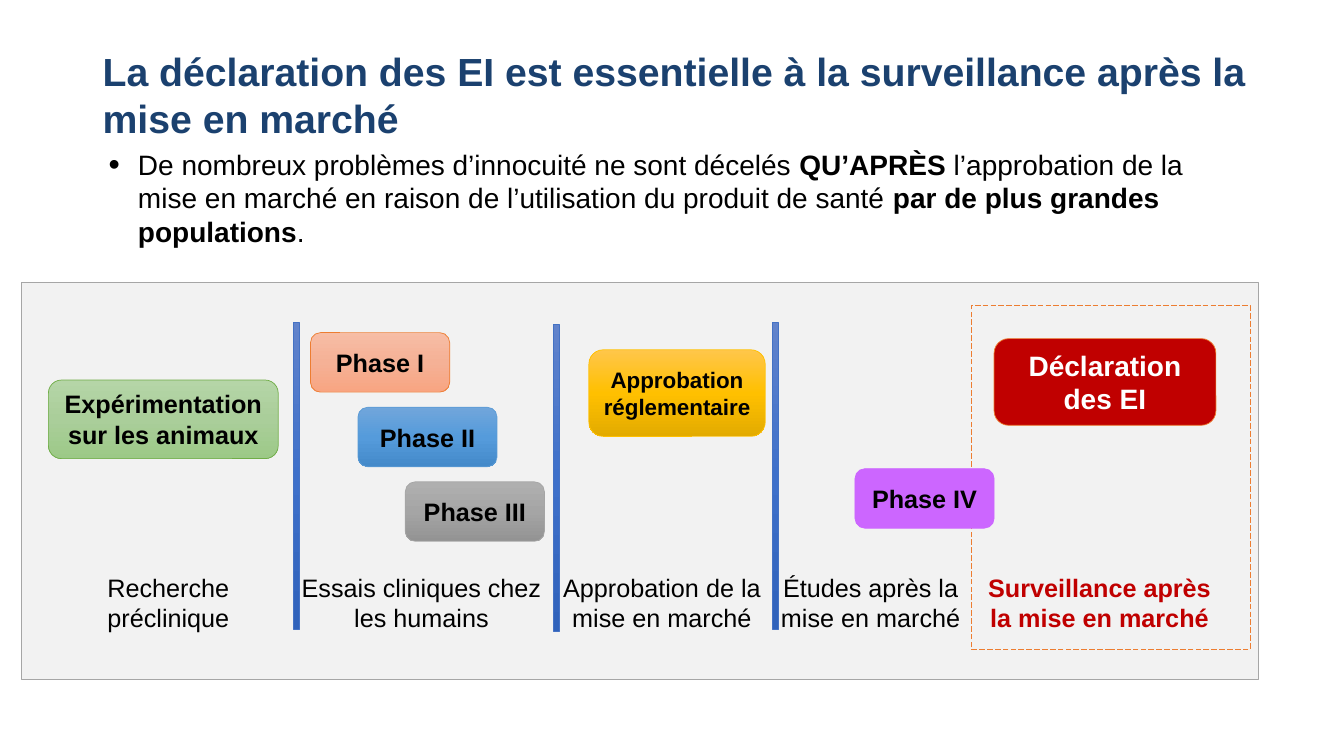
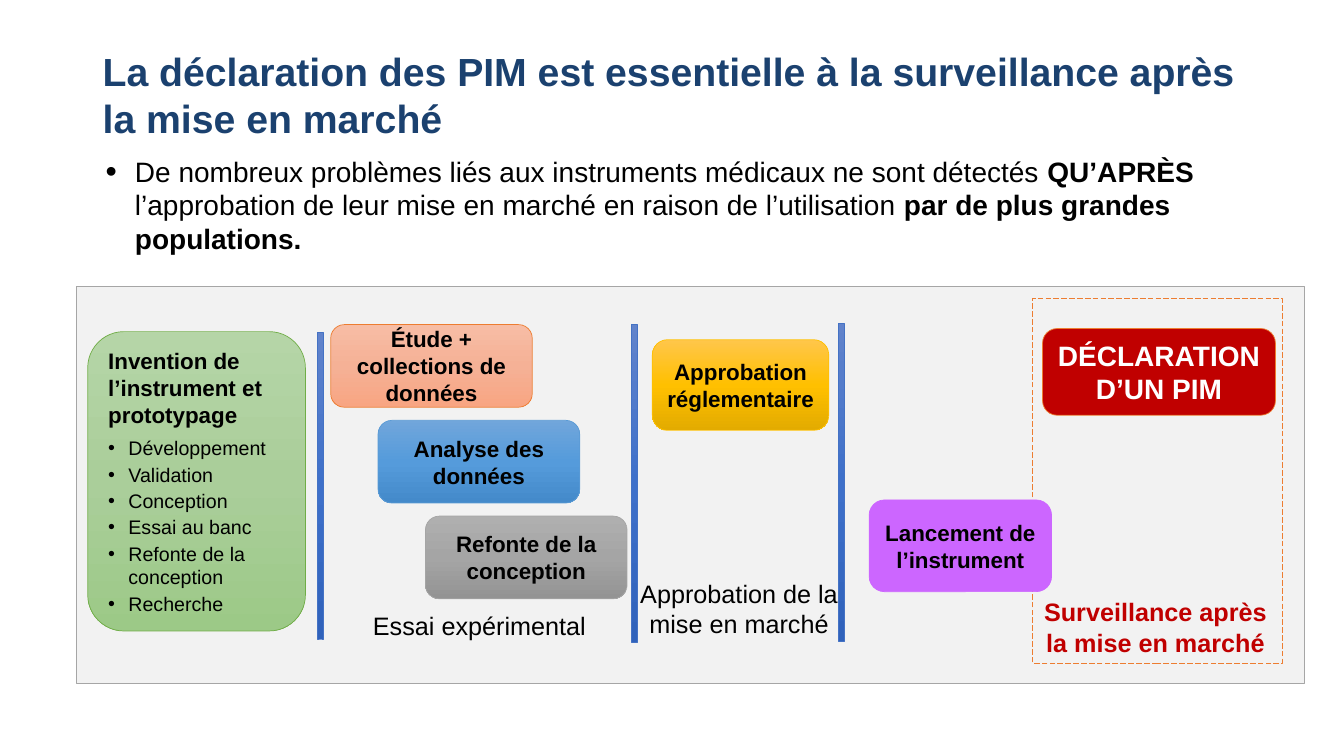
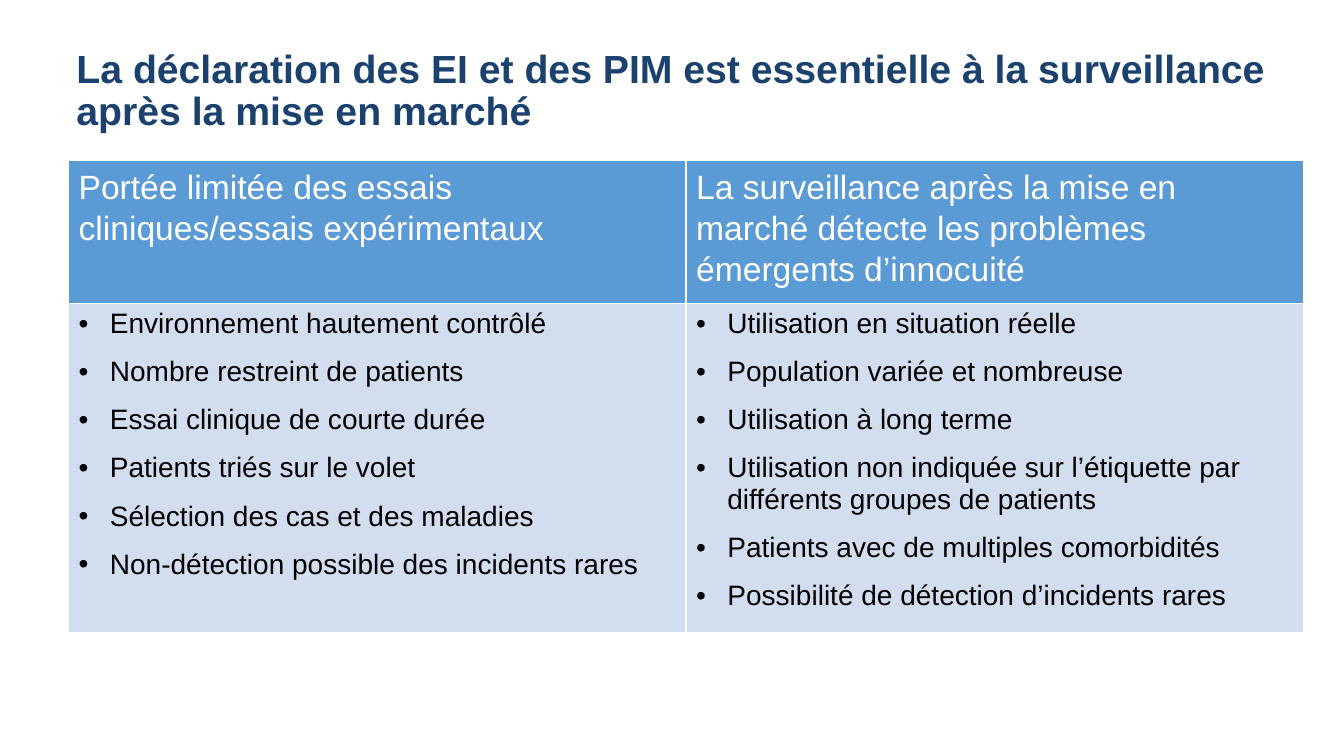
from dataclasses import dataclass

from pptx import Presentation
from pptx.dml.color import RGBColor
from pptx.enum.dml import MSO_LINE_DASH_STYLE as Dash
from pptx.enum.shapes import MSO_SHAPE as Preset
from pptx.enum.text import MSO_ANCHOR as Anchor, PP_ALIGN as Align
from pptx.oxml import parse_xml
from pptx.oxml.ns import nsdecls, qn
from pptx.util import Inches, Pt


@dataclass(frozen=True)
class Theme:
    font: str = "Arial"
    navy: str = "1B416F"
    black: str = "000000"
    white: str = "FFFFFF"
    red: str = "C00000"
    header: str = "5B9BD5"
    cell: str = "D2DEEF"
    title_size: int = 28
    header_size: int = 24
    body_size: int = 20
    label_size: int = 18
    box_size: int = 16
    list_size: int = 14


THEME = Theme()

LOOKS = {
    "panel": {"fill": ["F2F2F2"], "line": "A6A6A6"},
    "frame": {"fill": [], "line": "ED7D31"},
    "divider": {"fill": ["6183CB", "3E70CA", "3062BB"], "line": "4472C4"},
    "green": {"fill": ["B5D5A7", "AACE9A", "9CC987"], "line": "70AD47"},
    "orange": {"fill": ["F7BDA5", "F5B196", "F8A582"], "line": "ED7D31"},
    "blue": {"fill": ["71A6DB", "559BDB", "448ACA"], "line": "5B9BD5"},
    "gray": {"fill": ["AFAFAF", "A5A5A5", "939393"], "line": "A5A5A5"},
    "yellow": {"fill": ["FFC64B", "FFC000", "E3AB00"], "line": "FFC000"},
    "violet": {"fill": ["CC66FF"], "line": "CC66FF"},
    "red": {"fill": ["C00000"], "line": "ED7D31"},
}
STAIR_LOOKS = ["orange", "blue", "gray"]
DIVIDER_WIDTH = 0.06

TIMELINES = [
    {
        "title": ("La déclaration des EI est essentielle à la surveillance après la mise en marché",
                  (0.92, 0.4, 11.57, 1.07)),
        "intro_at": (0.98, 1.41, 11.5, 1.35),
        "intro": [("De nombreux problèmes d’innocuité ne sont décelés ", False),
                  ("QU’APRÈS", True),
                  (" l’approbation de la mise en marché en raison de l’utilisation du produit de santé ", False),
                  ("par de plus grandes populations", True),
                  (".", False)],
        "panel": (0.21, 2.8, 12.27, 3.94),
        "frame": (9.63, 3.03, 2.77, 3.41),
        "dividers": [(2.91, 3.2, 3.04), (5.49, 3.22, 3.04), (7.66, 3.2, 3.04)],
        "labels": [("Recherche préclinique", (0.49, 5.63, 2.36, 0.71)),
                   ("Essais cliniques chez les humains", (2.84, 5.63, 2.68, 0.71)),
                   ("Approbation de la mise en marché", (5.46, 5.63, 2.21, 0.71)),
                   ("Études après la mise en marché", (7.61, 5.63, 2.05, 0.71))],
        "goal": ("Surveillance après la mise en marché", (9.6, 5.63, 2.61, 0.71)),
        "start": ("Expérimentation sur les animaux", [], (0.48, 3.77, 2.28, 0.78)),
        "stairs": ["Phase I", "Phase II", "Phase III"],
        "stair_at": (3.08, 3.3, 1.38, 0.59),
        "stair_step": (0.47, 0.74),
        "stair_size": THEME.label_size,
        "approval": (5.84, 3.47, 1.75, 0.86),
        "launch": ("Phase IV", (8.48, 4.65, 1.38, 0.59)),
        "report": ("Déclaration des EI", (9.86, 3.36, 2.2, 0.86)),
    },
    {
        "title": ("La déclaration des PIM est essentielle à la surveillance après la mise en marché",
                  (0.92, 0.4, 11.5, 1.07)),
        "intro_at": (0.95, 1.48, 11.5, 1.11),
        "intro": [("De nombreux problèmes liés aux instruments médicaux ne sont détectés ", False),
                  ("QU’APRÈS", True),
                  (" l’approbation de leur mise en marché en raison de l’utilisation ", False),
                  ("par de plus grandes populations.", True)],
        "panel": (0.76, 2.84, 12.18, 3.94),
        "frame": (10.24, 2.96, 2.48, 3.62),
        "dividers": [(3.15, 3.3, 3.04), (6.26, 3.22, 3.15), (8.32, 3.21, 3.15)],
        "labels": [("Essai expérimental", (3.38, 6.01, 2.75, 0.42)),
                   ("Approbation de la mise en marché", (6.25, 5.69, 2.16, 0.71))],
        "goal": ("Surveillance après la mise en marché", (10.24, 5.87, 2.44, 0.71)),
        "start": ("Invention de l’instrument et prototypage",
                  ["Développement", "Validation", "Conception", "Essai au banc",
                   "Refonte de la conception", "Recherche"],
                  (0.87, 3.29, 2.16, 2.97)),
        "stairs": ["Étude + collections de données", "Analyse des données", "Refonte de la conception"],
        "stair_at": (3.28, 3.22, 2, 0.82),
        "stair_step": (0.47, 0.95),
        "stair_size": THEME.box_size,
        "approval": (6.47, 3.37, 1.75, 0.9),
        "launch": ("Lancement de l’instrument", (8.62, 4.96, 1.81, 0.91)),
        "report": ("DÉCLARATION D’UN PIM", (10.34, 3.26, 2.31, 0.86)),
    },
]

COMPARISON = {
    "title": ("La déclaration des EI et des PIM est essentielle à la surveillance après la mise en marché",
              (0.66, 0.4, 12.28, 1.02)),
    "table": (0.68, 1.59, 12.25, 4.68),
    "rows": [1.41, 3.27],
    "columns": [
        ("Portée limitée des essais cliniques/essais expérimentaux",
         ["Environnement hautement contrôlé", "Nombre restreint de patients",
          "Essai clinique de courte durée", "Patients triés sur le volet",
          "Sélection des cas et des maladies", "Non-détection possible des incidents rares"]),
        ("La surveillance après la mise en marché détecte les problèmes émergents d’innocuité",
         ["Utilisation en situation réelle", "Population variée et nombreuse",
          "Utilisation à long terme",
          "Utilisation non indiquée sur l’étiquette par différents groupes de patients",
          "Patients avec de multiples comorbidités", "Possibilité de détection d’incidents rares"]),
    ],
}


def set_all(target, values):
    for name, value in values.items():
        setattr(target, name, value)


def place(rect):
    return [Inches(length) for length in rect]


def write(para, spans, size, color=THEME.black, indent=0, bullet_scale=100, **layout):
    set_all(para, layout)
    for text, bold in spans:
        span = para.add_run()
        span.text = text
        set_all(span.font, {"name": THEME.font, "size": Pt(size), "bold": bold})
        span.font.color.rgb = RGBColor.from_string(color)
    if indent:
        props = para._p.get_or_add_pPr()
        props.set("marL", str(Inches(indent)))
        props.set("indent", str(-Inches(indent)))
        for tag, name, value in (("buSzPct", "val", str(bullet_scale * 1000)),
                                 ("buFont", "typeface", THEME.font),
                                 ("buChar", "char", "•")):
            props.append(parse_xml(f'<a:{tag} {nsdecls("a")} {name}="{value}"/>'))


def add_text(page, rect, spans, size, anchor=Anchor.TOP, **style):
    frame = page.shapes.add_textbox(*place(rect)).text_frame
    set_all(frame, {"word_wrap": True, "vertical_anchor": anchor})
    write(frame.paragraphs[0], spans, size, **style)


def add_title(page, title, **layout):
    text, rect = title
    add_text(page, rect, [(text, True)], THEME.title_size, Anchor.MIDDLE, color=THEME.navy, **layout)


def add_figure(page, rect, look, preset=Preset.RECTANGLE):
    shape = page.shapes.add_shape(preset, *place(rect))
    shape.shadow.inherit = False
    colors = LOOKS[look]["fill"]
    if len(colors) == 1:
        shape.fill.solid()
        shape.fill.fore_color.rgb = RGBColor.from_string(colors[0])
    else:
        shape.fill.background()
    if len(colors) > 1:
        stops = "".join(f'<a:gs pos="{index * 50000}"><a:srgbClr val="{color}"/></a:gs>'
                        for index, color in enumerate(colors))
        gradient = parse_xml(f'<a:gradFill {nsdecls("a")} rotWithShape="1"><a:gsLst>{stops}</a:gsLst>'
                             '<a:lin ang="5400000" scaled="0"/></a:gradFill>')
        props = shape._element.spPr
        props.replace(props.find(qn("a:noFill")), gradient)
    shape.line.color.rgb = RGBColor.from_string(LOOKS[look]["line"])
    shape.line.width = Pt(0.5)
    return shape


def add_box(page, rect, look, text, size, color=THEME.black, anchor=Anchor.MIDDLE, **layout):
    frame = add_figure(page, rect, look, Preset.ROUNDED_RECTANGLE).text_frame
    set_all(frame, {"word_wrap": True, "vertical_anchor": anchor})
    write(frame.paragraphs[0], [(text, True)], size, color, **{"alignment": Align.CENTER, **layout})
    return frame


def add_start(page, heading, items, rect):
    if not items:
        add_box(page, rect, "green", heading, THEME.label_size, anchor=Anchor.TOP)
        return
    frame = add_box(page, rect, "green", heading, THEME.box_size, anchor=Anchor.TOP,
                    alignment=Align.LEFT, space_after=Pt(6))
    for item in items:
        write(frame.add_paragraph(), [(item, False)], THEME.list_size, indent=0.2,
              alignment=Align.LEFT, space_after=Pt(2))


def build_timeline(page, content):
    add_title(page, content["title"])
    add_text(page, content["intro_at"], content["intro"], THEME.body_size,
             indent=0.29, bullet_scale=115, space_before=Pt(6))
    add_figure(page, content["panel"], "panel")
    add_figure(page, content["frame"], "frame").line.dash_style = Dash.LONG_DASH
    for left, top, height in content["dividers"]:
        add_figure(page, (left, top, DIVIDER_WIDTH, height), "divider")
    for text, rect in content["labels"]:
        add_text(page, rect, [(text, False)], THEME.label_size, alignment=Align.CENTER)
    goal, goal_at = content["goal"]
    add_text(page, goal_at, [(goal, True)], THEME.label_size, color=THEME.red, alignment=Align.CENTER)

    add_start(page, *content["start"])
    left, top, width, height = content["stair_at"]
    across, down = content["stair_step"]
    for index, (text, look) in enumerate(zip(content["stairs"], STAIR_LOOKS)):
        rect = (left + index * across, top + index * down, width, height)
        add_box(page, rect, look, text, content["stair_size"])
    add_box(page, content["approval"], "yellow", "Approbation réglementaire", THEME.box_size)
    launch, launch_at = content["launch"]
    add_box(page, launch_at, "violet", launch, content["stair_size"])
    report, report_at = content["report"]
    add_box(page, report_at, "red", report, THEME.body_size, THEME.white)


def style_cell(cell, fill):
    props = cell._tc.get_or_add_tcPr()
    for side in "LRTB":
        props.append(parse_xml(f'<a:ln{side} {nsdecls("a")} w="{Pt(1)}"><a:solidFill>'
                               f'<a:srgbClr val="{THEME.white}"/></a:solidFill></a:ln{side}>'))
    cell.fill.solid()
    cell.fill.fore_color.rgb = RGBColor.from_string(fill)


def build_comparison(page, content):
    add_title(page, content["title"], line_spacing=0.9)
    columns = content["columns"]
    table = page.shapes.add_table(len(content["rows"]), len(columns), *place(content["table"])).table
    for row, height in zip(table.rows, content["rows"]):
        row.height = Inches(height)
    spacing = {"space_before": Pt(6), "space_after": Pt(6)}
    for index, (heading, items) in enumerate(columns):
        top, body = table.cell(0, index), table.cell(1, index)
        style_cell(top, THEME.header)
        style_cell(body, THEME.cell)
        write(top.text_frame.paragraphs[0], [(heading, False)], THEME.header_size, THEME.white,
              line_spacing=1.1, **spacing)
        for number, item in enumerate(items):
            frame = body.text_frame
            para = frame.add_paragraph() if number else frame.paragraphs[0]
            write(para, [(item, False)], THEME.body_size, indent=0.31, **spacing)


def main():
    deck = Presentation()
    set_all(deck, {"slide_width": Inches(13.33), "slide_height": Inches(7.5)})
    blank = deck.slide_layouts[6]
    for content in TIMELINES:
        build_timeline(deck.slides.add_slide(blank), content)
    build_comparison(deck.slides.add_slide(blank), COMPARISON)
    deck.save("out.pptx")


if __name__ == "__main__":
    main()
